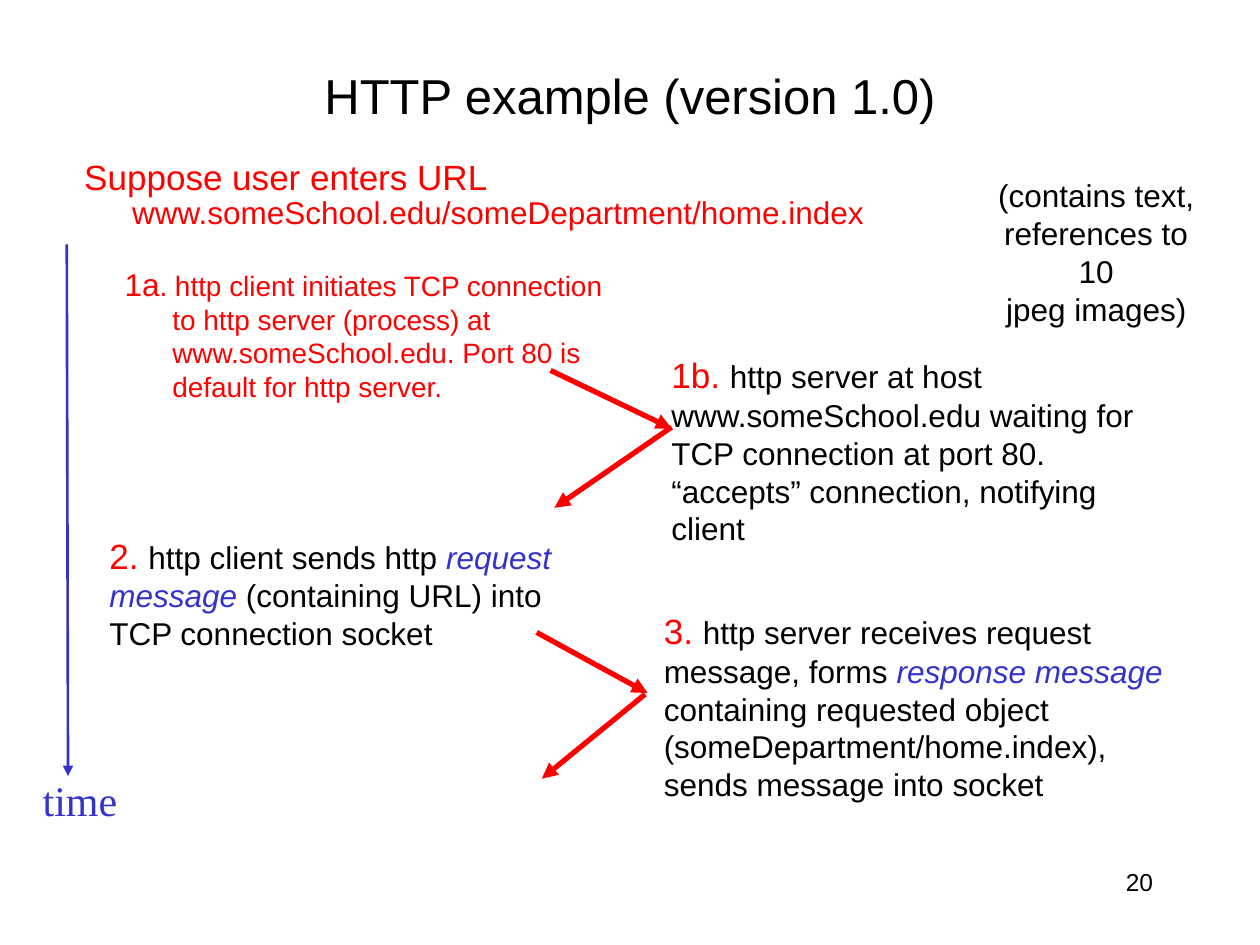
from dataclasses import dataclass

from lxml import etree
from pptx import Presentation
from pptx.dml.color import RGBColor
from pptx.enum.shapes import MSO_CONNECTOR
from pptx.enum.text import MSO_ANCHOR, PP_ALIGN
from pptx.oxml.ns import qn
from pptx.util import Inches, Pt

LINE = MSO_CONNECTOR.STRAIGHT
MIDDLE, TOP = MSO_ANCHOR.MIDDLE, MSO_ANCHOR.TOP
LEFT, CENTER, RIGHT = PP_ALIGN.LEFT, PP_ALIGN.CENTER, PP_ALIGN.RIGHT


@dataclass(frozen=True)
class Theme:
    sans: str = "Arial"
    serif: str = "Times New Roman"
    black: RGBColor = RGBColor(0, 0, 0)
    red: RGBColor = RGBColor(255, 0, 0)
    blue: RGBColor = RGBColor(0x33, 0x33, 0xCC)
    title: int = 28
    axis: int = 24
    lead: int = 20
    body: int = 18
    small: int = 16
    page: int = 14


THEME = Theme()


def add_run(para, text, size=THEME.body, color=THEME.black, italic=False, font=THEME.sans):
    run = para.add_run()
    run.text = text
    run.font.name = font
    run.font.size = Pt(size)
    run.font.color.rgb = color
    run.font.italic = italic


def add_box(slide, left, top, width, height, align=LEFT, anchor=TOP, wrap=True):
    box = slide.shapes.add_textbox(Inches(left), Inches(top), Inches(width), Inches(height))
    frame = box.text_frame
    frame.word_wrap = wrap
    frame.vertical_anchor = anchor
    frame.paragraphs[0].alignment = align
    return frame


def add_intro(slide, left, top, width, height, runs, space):
    para = add_box(slide, left, top, width, height).paragraphs[0]
    para.space_before = Pt(4)
    para.line_spacing = space
    props = para._p.get_or_add_pPr()
    props.set("marL", str(Inches(0.38)))
    props.set("indent", str(-Inches(0.38)))
    for text, size in runs:
        add_run(para, text, size, THEME.red)


def add_step(slide, left, top, height, label, parts):
    para = add_box(slide, left, top, 4.17, height).paragraphs[0]
    add_run(para, label, THEME.lead, THEME.red)
    for text, term in parts:
        add_run(para, text, color=THEME.blue if term else THEME.black, italic=term)


def add_arrow(slide, start, end, color=THEME.red, width=3):
    ends = [Inches(v) for v in (*start, *end)]
    arrow = slide.shapes.add_connector(LINE, *ends)
    arrow.line.color.rgb = color
    arrow.line.width = Pt(width)
    tail = etree.SubElement(arrow.line._get_or_add_ln(), qn("a:tailEnd"))
    tail.set("type", "triangle")
    etree.SubElement(arrow._element.spPr, qn("a:effectLst"))


def main():
    deck = Presentation()
    deck.slide_width, deck.slide_height = Inches(10), Inches(7.5)
    slide = deck.slides.add_slide(deck.slide_layouts[6])

    title = add_box(slide, 0.75, 0.42, 8.5, 0.67, CENTER, MIDDLE)
    add_run(title.paragraphs[0], "HTTP example (version 1.0)", THEME.title)

    add_intro(slide, 0.57, 1.22, 9.12, 0.51, [
        ("Suppose user enters URL ", THEME.lead),
        ("www.someSchool.edu/someDepartment/home.index", THEME.body),
    ], 0.9)
    add_intro(slide, 0.89, 2.05, 4.17, 2.12, [
        ("1a", THEME.body),
        (". http client initiates TCP connection to http server (process) at "
         "www.someSchool.edu. Port 80 is default for http server.", THEME.small),
    ], 1.0)

    add_step(slide, 5.23, 2.76, 1.65, "1b. ", [
        ("http server at host www.someSchool.edu waiting for TCP connection at "
         "port 80. “accepts” connection, notifying client", False),
    ])
    add_step(slide, 0.77, 4.19, 1.18, "2. ", [
        ("http client sends http ", False),
        ("request message", True),
        (" (containing URL) into TCP connection socket", False),
    ])
    add_step(slide, 5.17, 4.79, 1.97, "3. ", [
        ("http server receives request message, forms ", False),
        ("response message", True),
        (" containing requested object (someDepartment/home.index), "
         "sends message into socket", False),
    ])

    add_arrow(slide, (0.53, 1.94), (0.54, 6.16), THEME.blue, 1.5)
    for start, end in (
        ((4.37, 2.94), (5.33, 3.4)),
        ((5.33, 3.39), (4.4, 4.03)),
        ((4.26, 5.02), (5.14, 5.5)),
        ((5.12, 5.51), (4.3, 6.18)),
    ):
        add_arrow(slide, start, end)

    time = add_box(slide, 0.24, 6.1, 0.79, 0.5, CENTER, wrap=False)
    add_run(time.paragraphs[0], "time", THEME.axis, THEME.blue, font=THEME.serif)

    note = add_box(slide, 7.7, 1.35, 2.0, 1, CENTER, wrap=False)
    note_lines = ("(contains text,", "references to 10", "jpeg images)")
    for i, text in enumerate(note_lines):
        para = note.add_paragraph() if i else note.paragraphs[0]
        para.alignment = CENTER
        add_run(para, text)

    page = add_box(slide, 7.17, 6.83, 2.08, 0.5, RIGHT)
    add_run(page.paragraphs[0], "20", THEME.page)

    deck.save("out.pptx")


if __name__ == "__main__":
    main()
